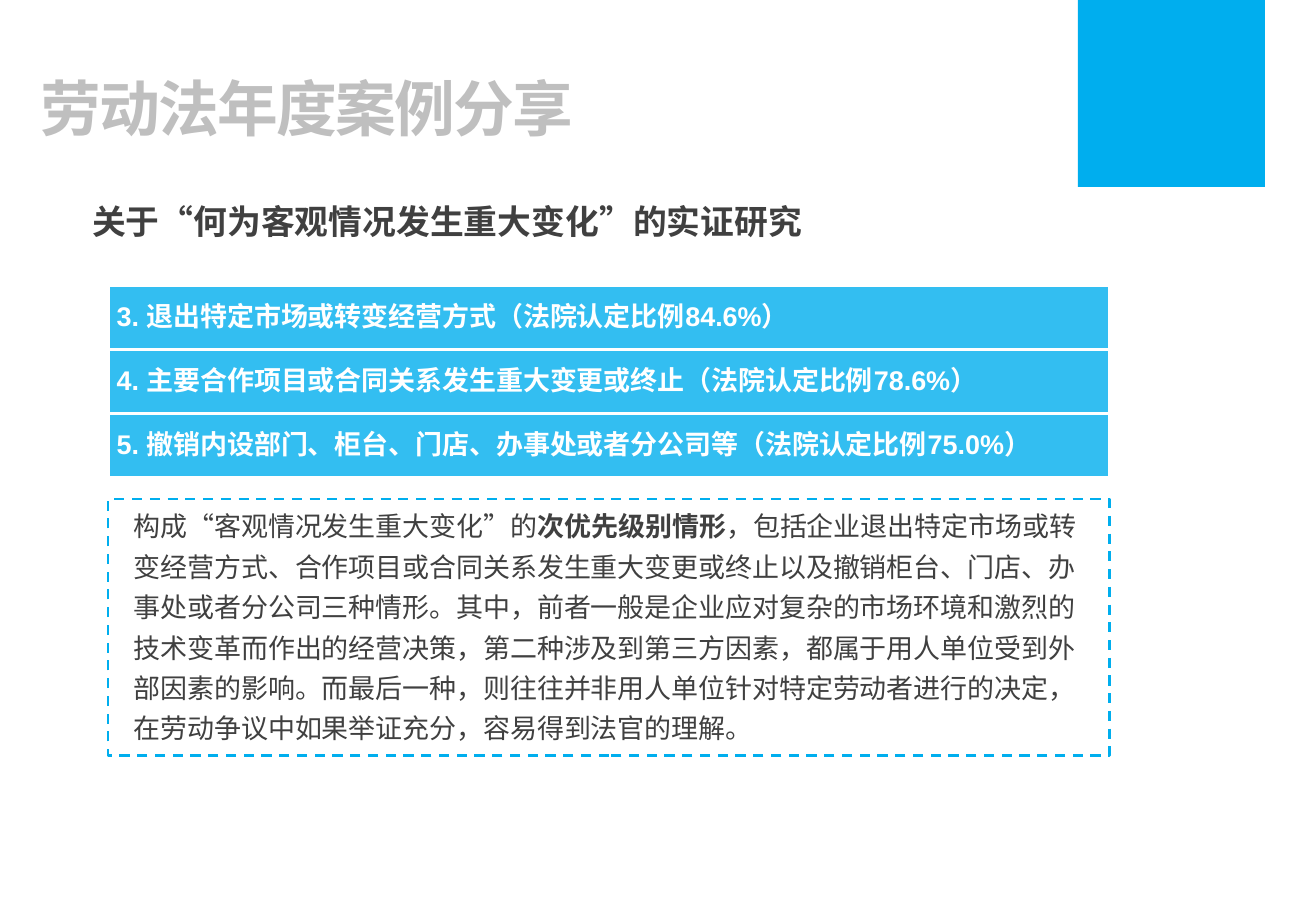
from pptx import Presentation
from pptx.dml.color import RGBColor
from pptx.enum.dml import MSO_LINE
from pptx.enum.lang import MSO_LANGUAGE_ID as Lang
from pptx.enum.shapes import MSO_SHAPE as Shape
from pptx.enum.text import MSO_ANCHOR as Anchor, PP_ALIGN as Align
from pptx.oxml.ns import qn
from pptx.util import Inches, Pt
from lxml.etree import SubElement

WIDTH, HEIGHT = 10.83, 7.5
BLUE, WHITE, DARK, GREY = "00AEEE", "FFFFFF", "404040", "BFBFBF"

TITLE = "劳动法年度案例分享"
HEADING = "关于“何为客观情况发生重大变化”的实证研究"
FINDINGS = [
    "3. 退出特定市场或转变经营方式（法院认定比例84.6%）",
    "4. 主要合作项目或合同关系发生重大变更或终止（法院认定比例78.6%）",
    "5. 撤销内设部门、柜台、门店、办事处或者分公司等（法院认定比例75.0%）",
]
COMMENTARY = [
    ("构成“客观情况发生重大变化”的", False),
    ("次优先级别情形", True),
    ("，包括企业退出特定市场或转变经营方式、合作项目或合同关系发生重大变更或终止以及"
     "撤销柜台、门店、办事处或者分公司三种情形。其中，前者一般是企业应对复杂的市场环境"
     "和激烈的技术变革而作出的经营决策，第二种涉及到第三方因素，都属于用人单位受到外部"
     "因素的影响。而最后一种，则往往并非用人单位针对特定劳动者进行的决定，在劳动争议中"
     "如果举证充分，容易得到法官的理解。", False),
]


def color(value):
    return RGBColor.from_string(value)


def write(host, parts, size, ink, font="Arial", anchor=Anchor.TOP,
          insets=(0.1, 0.05, 0.1, 0.05), line=1.0, after=0, tracking=0):
    """Fill the host with one paragraph made of (text, bold) parts."""
    frame = host.text_frame
    frame.word_wrap = True
    frame.vertical_anchor = anchor
    (frame.margin_left, frame.margin_top,
     frame.margin_right, frame.margin_bottom) = map(Inches, insets)
    paragraph = frame.paragraphs[0]
    paragraph.alignment = Align.LEFT
    paragraph.line_spacing = line
    paragraph.space_after = Pt(after)
    for words, bold in parts:
        run = paragraph.add_run()
        run.text = words
        run.font.name, run.font.size, run.font.bold = font, Pt(size), bold
        run.font.language_id = Lang.SIMPLIFIED_CHINESE
        run.font.color.rgb = color(ink)
        if tracking:
            run._r.get_or_add_rPr().set("spc", str(tracking * 100))


def text_box(slide, box, words, **style):
    host = slide.shapes.add_textbox(*map(Inches, box))
    write(host, [(words, True)], **style)


def panel(slide, box, fill=None, alpha=100, outline=None, weight=1, dash=None):
    shape = slide.shapes.add_shape(Shape.RECTANGLE, *map(Inches, box))
    shape.shadow.inherit = False
    if fill:
        shape.fill.solid()
        shape.fill.fore_color.rgb = color(fill)
        if alpha < 100:
            tint = shape.fill._xPr.find(".//" + qn("a:srgbClr"))
            SubElement(tint, qn("a:alpha")).set("val", str(alpha * 1000))
    else:
        shape.fill.background()
    if outline:
        shape.line.color.rgb = color(outline)
        shape.line.width = Pt(weight)
        if dash:
            shape.line.dash_style = dash
    else:
        shape.line.fill.background()
    return shape


def header(slide, box):
    left, top, width, height = box
    # Corner square
    side = 1.54
    panel(slide, (left + width - side, top, side, side), fill=BLUE)
    # Title and heading
    text_box(slide, (left, top + 0.35, 8.1, 1.17), TITLE, size=36, ink=GREY,
             anchor=Anchor.MIDDLE, insets=(0, 0, 0, 0), line=Pt(36), after=12,
             tracking=-1)
    text_box(slide, (left + 0.33, top + height - 0.44, 8.7, 0.44), HEADING,
             size=20, ink=DARK)


def findings(slide, box):
    left, top, width, height = box
    row = height / len(FINDINGS)
    for index, finding in enumerate(FINDINGS):
        band = panel(slide, (left, top + index * row, width, row), fill=BLUE,
                     alpha=80, outline=WHITE, weight=2)
        write(band, [(finding, True)], size=16, ink=WHITE,
              anchor=Anchor.MIDDLE, insets=(0.07,) * 4, line=0.9, after=5.6)


def commentary(slide, box):
    frame = panel(slide, box, outline=BLUE, weight=1.5, dash=MSO_LINE.DASH)
    write(frame, COMMENTARY, size=16, ink=DARK, font="Noto Sans CJK SC",
          insets=(0.21, 0.02, 0.12, 0.02), line=1.25)


def main():
    deck = Presentation()
    deck.slide_width, deck.slide_height = Inches(WIDTH), Inches(HEIGHT)
    slide = deck.slides.add_slide(deck.slide_layouts[6])
    header(slide, (0.33, 0, 10.08, 2.04))
    findings(slide, (0.89, 2.35, 8.24, 1.58))
    commentary(slide, (0.89, 4.11, 8.24, 2.11))
    deck.save("out.pptx")


if __name__ == "__main__":
    main()
